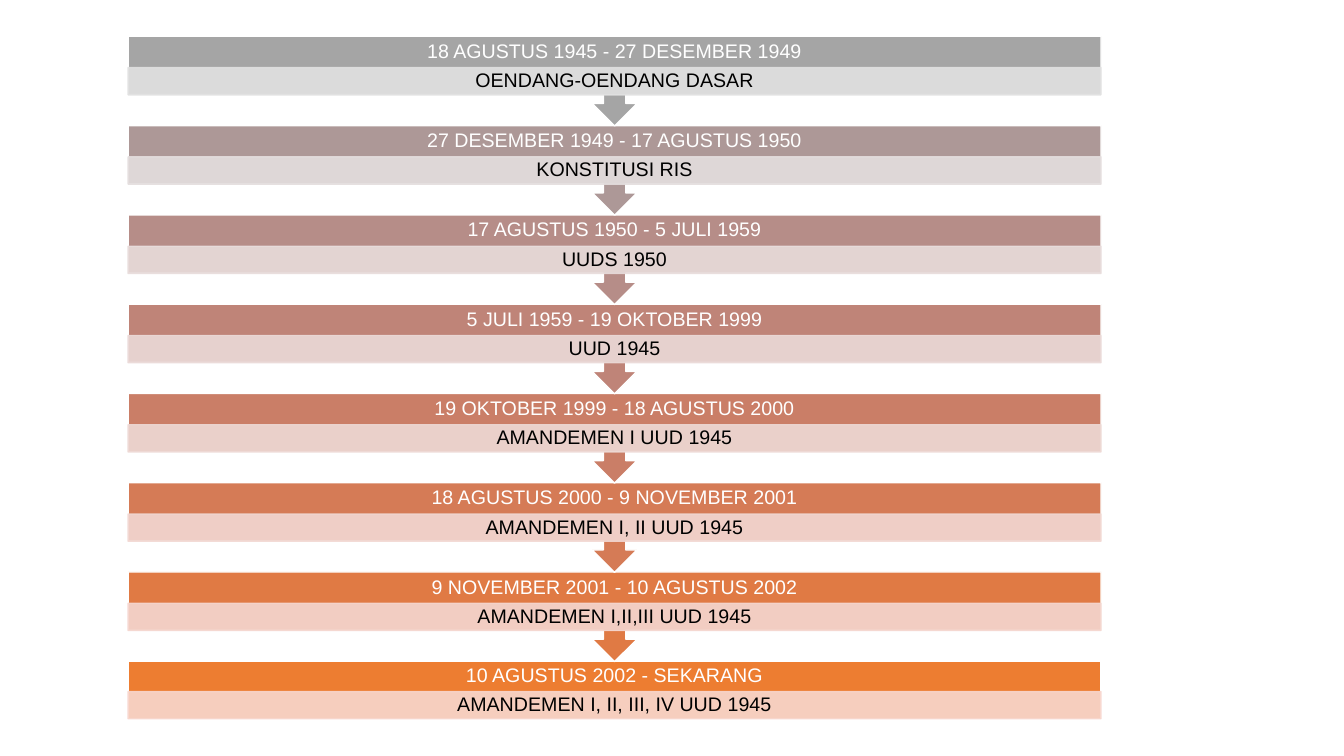
from pptx import Presentation
from pptx.dml.color import RGBColor
from pptx.enum.shapes import MSO_SHAPE
from pptx.enum.text import MSO_ANCHOR, PP_ALIGN
from pptx.oxml.ns import qn
from pptx.util import Inches, Pt
from lxml import etree

RECTANGLE = MSO_SHAPE.RECTANGLE
CALLOUT = MSO_SHAPE.UP_ARROW_CALLOUT
MIDDLE = MSO_ANCHOR.MIDDLE
CENTER = PP_ALIGN.CENTER

SLIDE_WIDTH, SLIDE_HEIGHT = 13.33, 7.5
FLOW_BOX = (1.27, 0.36, 9.65, 6.78)
LAST_HEIGHT = 0.58
ARROW_OVERLAP = 0.004
BAND_HEIGHT = 0.27
FONT = "Arial"
COLORS = {
    "white": "FFFFFF",
    "black": "000000",
    "period": ["A5A5A5", "AD9897", "B68D88", "BF8478",
               "CA7E67", "D57B56", "E07A44", "ED7D31"],
    "constitution": ["E1E1E1", "E4DEDE", "E8DCDB", "EBDAD8",
                     "EED9D5", "F2D8D3", "F5D7D0", "F8D7CE"],
}
STAGES = [
    ("18 AGUSTUS 1945 - 27 DESEMBER 1949", "OENDANG-OENDANG DASAR"),
    ("27 DESEMBER 1949 - 17 AGUSTUS 1950", "KONSTITUSI RIS"),
    ("17 AGUSTUS 1950 - 5 JULI 1959", "UUDS 1950"),
    ("5 JULI 1959 - 19 OKTOBER 1999", "UUD 1945"),
    ("19 OKTOBER 1999 - 18 AGUSTUS 2000", "AMANDEMEN I UUD 1945"),
    ("18 AGUSTUS 2000 - 9 NOVEMBER 2001", "AMANDEMEN I, II UUD 1945"),
    ("9 NOVEMBER 2001 - 10 AGUSTUS 2002", "AMANDEMEN I,II,III UUD 1945"),
    ("10 AGUSTUS 2002 - SEKARANG", "AMANDEMEN I, II, III, IV UUD 1945"),
]


def set_opacity(color_format_parent, percent):
    """Make every solid colour below the element partly transparent."""
    for color in color_format_parent.iter(qn("a:srgbClr")):
        etree.SubElement(color, qn("a:alpha"), val=str(percent * 1000))


def add_block(shapes, kind, box, fill, line):
    """Add a filled preset shape with a one-point outline."""
    block = shapes.add_shape(kind, *map(Inches, box))
    block.shadow.inherit = False
    block.fill.solid()
    block.fill.fore_color.rgb = RGBColor.from_string(fill)
    block.line.color.rgb = RGBColor.from_string(line)
    block.line.width = Pt(1)
    return block


def write_label(holder, label, color, vertical_inset):
    """Write one centred line of text into a shape."""
    frame = holder.text_frame
    frame.word_wrap = True
    frame.vertical_anchor = MIDDLE
    frame.margin_left = frame.margin_right = Inches(0.11)
    frame.margin_top = frame.margin_bottom = Inches(vertical_inset)
    paragraph = frame.paragraphs[0]
    paragraph.alignment = CENTER
    paragraph.line_spacing = 0.9
    run = paragraph.add_run()
    run.text = label
    run.font.name = FONT
    run.font.size = Pt(14)
    run.font.color.rgb = RGBColor.from_string(color)


def add_stage(shapes, box, stage, colors, is_last):
    """Add a period heading with the constitution band beneath it."""
    left, top, width, height = box
    period, constitution = stage
    period_color, constitution_color = colors
    heading_height = height * (0.52 if is_last else 0.35)

    kind = RECTANGLE if is_last else CALLOUT
    body = add_block(shapes, kind, box, period_color, COLORS["white"])
    body.rotation = 0 if is_last else 180

    heading = shapes.add_textbox(*map(Inches, (left, top, width, heading_height)))
    write_label(heading, period, COLORS["white"], 0.11)

    band_box = (left, top + heading_height, width, BAND_HEIGHT)
    band = add_block(shapes, RECTANGLE, band_box, constitution_color, constitution_color)
    set_opacity(band.fill._xPr, 90)
    write_label(band, constitution, COLORS["black"], 0.02)


def add_flow(slide, box):
    """Stack the stages at an equal pitch, the lowest at the back."""
    left, top, width, height = box
    pitch = (height - LAST_HEIGHT) / (len(STAGES) - 1)
    palette = list(zip(COLORS["period"], COLORS["constitution"]))
    group = slide.shapes.add_group_shape()
    for row in reversed(range(len(STAGES))):
        is_last = row == len(STAGES) - 1
        stage_height = LAST_HEIGHT if is_last else pitch + ARROW_OVERLAP
        stage_box = (left, top + row * pitch, width, stage_height)
        add_stage(group.shapes, stage_box, STAGES[row], palette[row], is_last)


def main():
    """Build the slide and save it."""
    deck = Presentation()
    deck.slide_width, deck.slide_height = Inches(SLIDE_WIDTH), Inches(SLIDE_HEIGHT)
    slide = deck.slides.add_slide(deck.slide_layouts[6])
    add_flow(slide, FLOW_BOX)
    deck.save("out.pptx")


if __name__ == "__main__":
    main()
